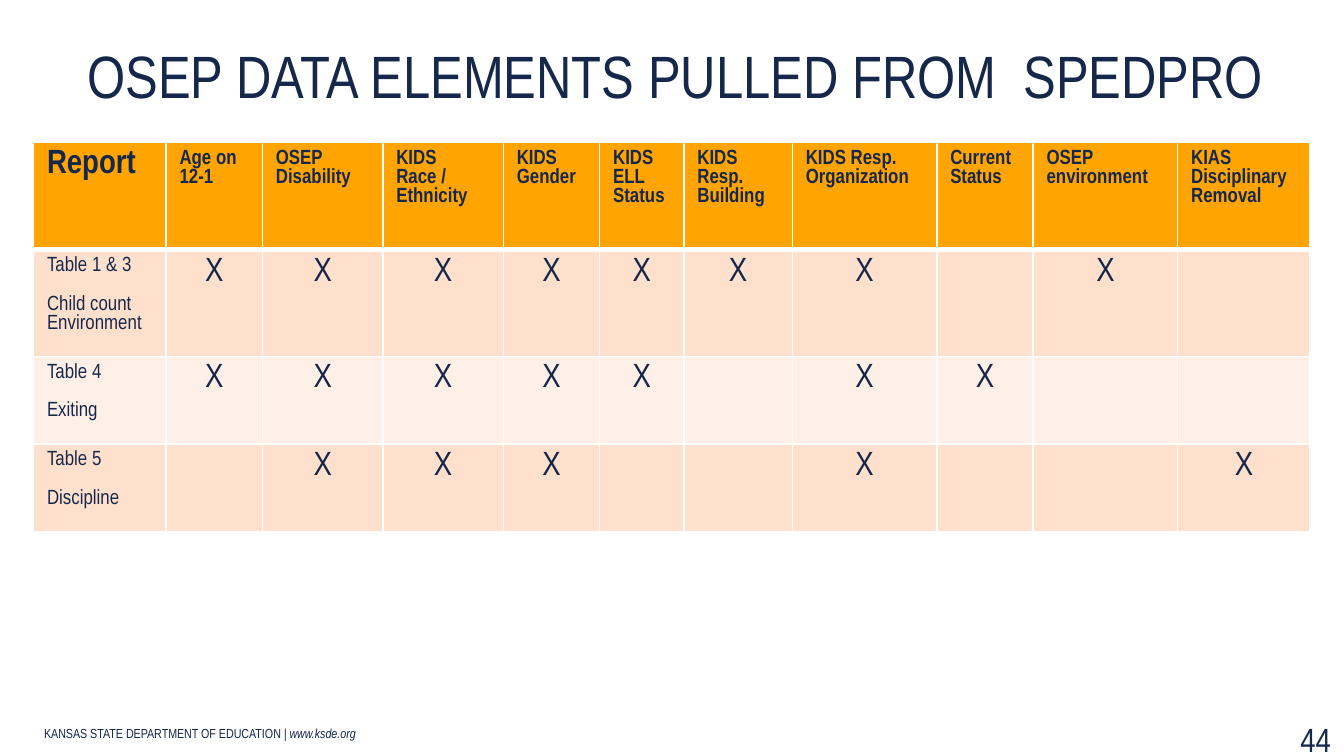
"""Build the slide showing which data elements each OSEP report pulls."""
from dataclasses import dataclass

import lxml.etree
import pptx
import pptx.dml.color
import pptx.enum.text
import pptx.oxml.ns
import pptx.util

Inches = pptx.util.Inches
Pt = pptx.util.Pt
Align = pptx.enum.text.PP_ALIGN
Anchor = pptx.enum.text.MSO_ANCHOR


@dataclass(frozen=True)
class Theme:
    font: str = "Arial Narrow"
    navy: str = "15284B"
    footer_navy: str = "15254B"
    header_fill: str = "FFA400"
    band_fills: tuple[str, str] = ("FFE0CC", "FFF0E7")
    border: str = "FFFFFF"
    title_size: float = 32
    large_size: float = 18
    label_size: float = 11
    footer_size: float = 7


@dataclass(frozen=True)
class Column:
    heading: str
    weight: int


@dataclass(frozen=True)
class Report:
    name: str
    details: tuple[str, ...]
    marks: str


THEME = Theme()
TABLE_WIDTH = 9.5
HEADER_HEIGHT = 0.8
REPORT_HEIGHT = 0.65
COLUMNS = [
    Column("Report", 11),
    Column("Age on 12-1", 8),
    Column("OSEP Disability", 10),
    Column("KIDS Race / Ethnicity", 10),
    Column("KIDS Gender", 8),
    Column("KIDS ELL Status", 7),
    Column("KIDS Resp. Building", 9),
    Column("KIDS Resp. Organization", 12),
    Column("Current Status", 8),
    Column("OSEP environment", 12),
    Column("KIAS Disciplinary Removal", 11),
]
REPORTS = [
    Report("Table 1 & 3", ("Child count", "Environment"), "XXXXXXX-X-"),
    Report("Table 4", ("Exiting",), "XXXXX-XX--"),
    Report("Table 5", ("Discipline",), "-XXX--X--X"),
]


def style_font(font, size: float, color: str, bold: bool) -> None:
    font.name, font.size, font.bold = THEME.font, Pt(size), bold
    font.color.rgb = pptx.dml.color.RGBColor.from_string(color)


def style_paragraph(paragraph, size: float, color: str = THEME.navy,
                    bold: bool = False, align=Align.LEFT) -> None:
    paragraph.alignment = align
    style_font(paragraph.font, size, color, bold)


def add_text_box(slide, left: float, top: float, width: float, height: float, anchor):
    text_frame = slide.shapes.add_textbox(
        Inches(left), Inches(top), Inches(width), Inches(height)).text_frame
    text_frame.word_wrap = True
    text_frame.vertical_anchor = anchor
    return text_frame


def paint_cell(cell, fill: str, top: float = 1, bottom: float = 1) -> None:
    cell.fill.solid()
    cell.fill.fore_color.rgb = pptx.dml.color.RGBColor.from_string(fill)
    properties = cell._tc.get_or_add_tcPr()
    qn = pptx.oxml.ns.qn
    sides = {"lnL": 1, "lnR": 1, "lnT": top, "lnB": bottom}
    for index, (side, width) in enumerate(sides.items()):
        line = lxml.etree.Element(qn(f"a:{side}"), w=str(Pt(width)))
        line_fill = lxml.etree.SubElement(line, qn("a:solidFill"))
        lxml.etree.SubElement(line_fill, qn("a:srgbClr"), val=THEME.border)
        properties.insert(index, line)


def fill_header(table) -> None:
    for index, column in enumerate(COLUMNS):
        cell = table.cell(0, index)
        cell.text = column.heading
        size = THEME.label_size if index else THEME.large_size
        style_paragraph(cell.text_frame.paragraphs[0], size, bold=True)
        paint_cell(cell, THEME.header_fill, bottom=3)


def fill_report_name(cell, report: Report) -> None:
    cell.text = "\n".join((report.name, *report.details))
    paragraphs = cell.text_frame.paragraphs
    for paragraph in paragraphs:
        paragraph.alignment = Align.LEFT
        for run in paragraph.runs:
            style_font(run.font, THEME.label_size, THEME.navy, False)
    paragraphs[1].space_before = Pt(10.3)


def fill_report(table, row: int, report: Report) -> None:
    fill = THEME.band_fills[(row - 1) % 2]
    for index in range(len(COLUMNS)):
        cell = table.cell(row, index)
        paint_cell(cell, fill, top=3 if row == 1 else 1)
        if index == 0:
            fill_report_name(cell, report)
        elif report.marks[index - 1] == "X":
            cell.text = "X"
            style_paragraph(cell.text_frame.paragraphs[0], THEME.large_size,
                            align=Align.CENTER)


def add_report_table(slide) -> None:
    heights = [HEADER_HEIGHT] + [REPORT_HEIGHT] * len(REPORTS)
    table = slide.shapes.add_table(
        len(heights), len(COLUMNS), Inches(0.25), Inches(1.06),
        Inches(TABLE_WIDTH), Inches(sum(heights))).table
    table.horz_banding = False
    total_weight = sum(column.weight for column in COLUMNS)
    for table_column, column in zip(table.columns, COLUMNS):
        table_column.width = Inches(TABLE_WIDTH * column.weight / total_weight)
    for table_row, height in zip(table.rows, heights):
        table_row.height = Inches(height)
    fill_header(table)
    for row, report in enumerate(REPORTS, start=1):
        fill_report(table, row, report)


def add_title(slide) -> None:
    text_frame = add_text_box(slide, 0.25, 0.31, 9.58, 0.51, Anchor.BOTTOM)
    text_frame.margin_left = Inches(0.4)
    text_frame.margin_top = Inches(0.1)
    text_frame.margin_bottom = 0
    text_frame.text = "OSEP DATA ELEMENTS PULLED FROM  SPEDPRO"
    style_paragraph(text_frame.paragraphs[0], THEME.title_size)


def add_footer(slide) -> None:
    text_frame = add_text_box(slide, 0.23, 5.34, 4.77, 0.22, Anchor.BOTTOM)
    paragraph = text_frame.paragraphs[0]
    paragraph.add_run().text = "KANSAS STATE DEPARTMENT OF EDUCATION "
    website = paragraph.add_run()
    website.text = "| www.ksde.org"
    website.font.italic = True
    style_paragraph(paragraph, THEME.footer_size, THEME.footer_navy)


def add_page_number(slide) -> None:
    text_frame = add_text_box(slide, 9.54, 5.3, 0.5, 0.4, Anchor.TOP)
    text_frame.text = "44"
    style_paragraph(text_frame.paragraphs[0], THEME.large_size, align=Align.CENTER)


def main() -> None:
    presentation = pptx.Presentation()
    presentation.slide_width = Inches(10)
    presentation.slide_height = Inches(5.625)
    slide = presentation.slides.add_slide(presentation.slide_layouts[6])
    add_footer(slide)
    add_title(slide)
    add_report_table(slide)
    add_page_number(slide)
    presentation.save("out.pptx")


if __name__ == "__main__":
    main()
